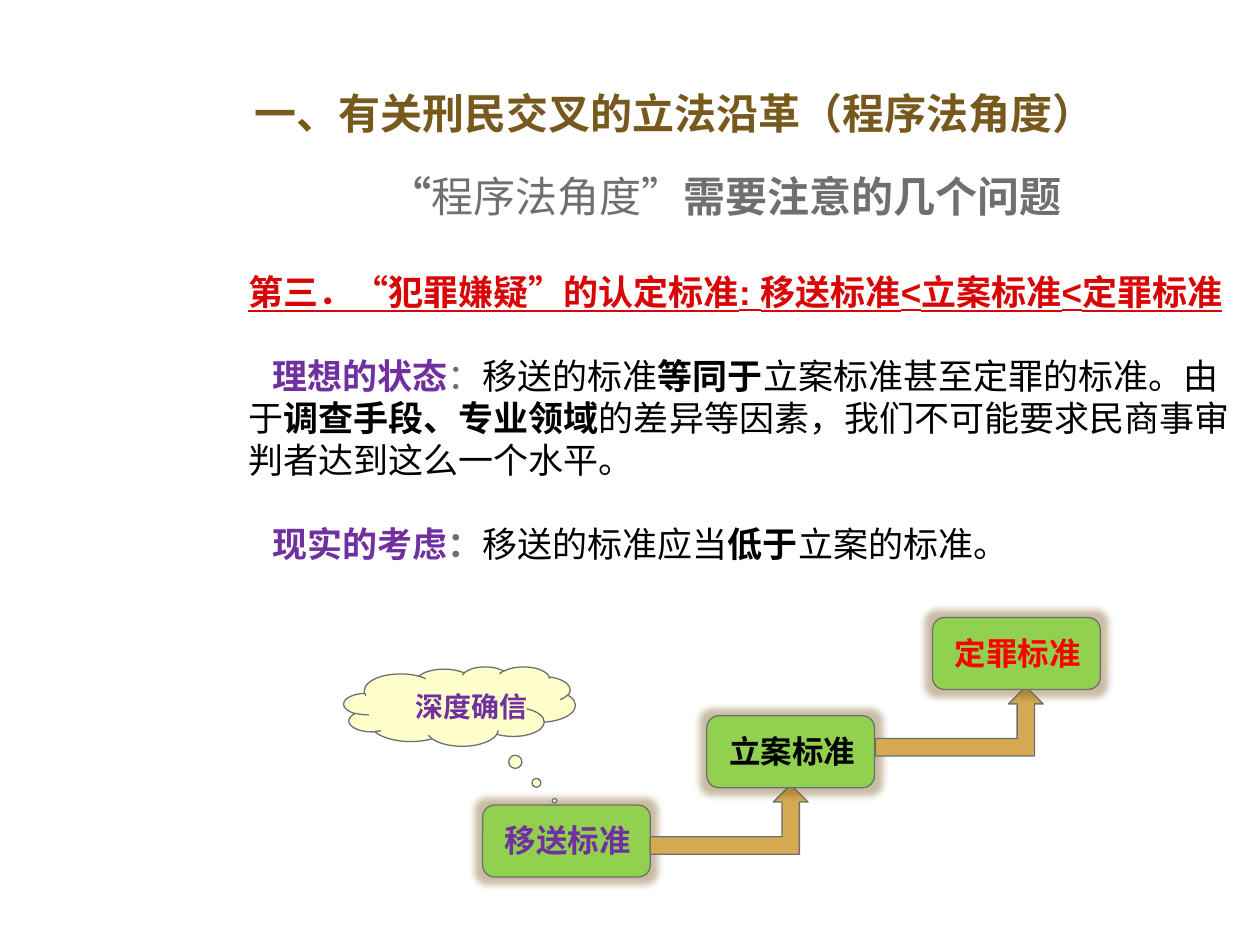
"""Build the slide on transfer, filing and conviction standards."""
from typing import NamedTuple

from lxml import etree
from pptx import Presentation
from pptx import util as u
from pptx.dml.color import RGBColor
from pptx.enum import lang, shapes, text
from pptx.oxml import ns

BROWN = RGBColor(0x78, 0x59, 0x1D)
GRAY = RGBColor(0x6D, 0x6F, 0x71)
CRIMSON = RGBColor(0xD8, 0x06, 0x06)
RED = RGBColor(0xFF, 0x00, 0x00)
PURPLE = RGBColor(0x70, 0x30, 0xA0)
BLACK = RGBColor(0x00, 0x00, 0x00)
GREEN = RGBColor(0x92, 0xD0, 0x50)
CREAM = RGBColor(0xFF, 0xFF, 0xCC)
GOLD = RGBColor(0xD6, 0xA9, 0x53)
SHAPE = shapes.MSO_SHAPE


class Span(NamedTuple):
    text: str
    color: RGBColor
    bold: bool = True
    underline: bool = False


class Area(NamedTuple):
    left: float
    top: float
    width: float
    height: float


class Step(NamedTuple):
    label: str
    color: RGBColor
    left: float
    top: float


TITLE = [Span("一、有关刑民交叉的立法沿革（程序法角度）", BROWN)]
SUBTITLE = [
    Span("“", GRAY),
    Span("程序法角度”", GRAY, False),
    Span("需要注意的几个问题", GRAY),
]
BODY = [
    [Span("第三．“犯罪嫌疑”的认定标准: 移送标准<立案标准<定罪标准", CRIMSON, True, True)],
    [
        Span("理想的状态", PURPLE),
        Span("：", GRAY, False),
        Span("移送的标准", BLACK, False),
        Span("等同于", BLACK),
        Span("立案标准甚至定罪的标准。由于", BLACK, False),
        Span("调查手段、专业领域", BLACK),
        Span("的差异等因素，我们不可能要求民商事审判者达到这么一个水平。", BLACK, False),
    ],
    [
        Span("现实的考虑", PURPLE),
        Span("：", GRAY),
        Span("移送的标准应当", BLACK, False),
        Span("低于", BLACK),
        Span("立案的标准。", BLACK, False),
    ],
]
STEPS = [
    Step("移送标准", PURPLE, 9.73, 16.23),
    Step("立案标准", BLACK, 14.25, 14.43),
    Step("定罪标准", RED, 18.8, 12.45),
]
ARROWS = [Area(13.11, 15.82, 3.18, 1.4), Area(17.65, 13.84, 3.38, 1.4)]


def lengths(area: Area) -> list:
    return [u.Cm(v) for v in area]


def place(s, area: Area) -> None:
    s.left, s.top, s.width, s.height = lengths(area)


def frame(s, anchor):
    tf = s.text_frame
    tf.word_wrap = True
    tf.auto_size = text.MSO_AUTO_SIZE.NONE
    tf.vertical_anchor = anchor
    return tf


def write(p, spans: list[Span], size: float) -> None:
    for span in spans:
        r = p.add_run()
        r.text = span.text
        r.font.name = "Arial"
        r.font.size = u.Pt(size)
        r.font.bold = span.bold
        r.font.underline = span.underline
        r.font.color.rgb = span.color
        r.font.language_id = lang.MSO_LANGUAGE_ID.SIMPLIFIED_CHINESE


def add_text(slide, area: Area, spans: list[Span], size: float, anchor=text.MSO_ANCHOR.TOP):
    p = frame(slide.shapes.add_textbox(*lengths(area)), anchor).paragraphs[0]
    write(p, spans, size)
    return p


def add_shape(slide, kind, area: Area, fill: RGBColor):
    s = slide.shapes.add_shape(kind, *lengths(area))
    s.shadow.inherit = False
    s.fill.solid()
    s.fill.fore_color.rgb = fill
    s.line.color.rgb = GRAY
    s.line.width = u.Pt(0.75)
    return s


def add_glow(s) -> None:
    effects = s._element.spPr.find(ns.qn("a:effectLst"))
    glow = etree.SubElement(effects, ns.qn("a:glow"), rad=str(u.Pt(8)))
    color = etree.SubElement(glow, ns.qn("a:srgbClr"), val=str(BROWN))
    etree.SubElement(color, ns.qn("a:alpha"), val="40000")


def add_step(slide, step: Step) -> None:
    add_glow(add_shape(slide, SHAPE.ROUNDED_RECTANGLE, Area(step.left, step.top, 3.38, 1.45), GREEN))
    label = Area(step.left + 0.2, step.top + 0.2, 3.23, 1.02)
    add_text(slide, label, [Span(step.label, step.color)], 18)


def fill_body(s) -> None:
    tf = frame(s, text.MSO_ANCHOR.TOP)
    for i, spans in enumerate(BODY):
        p = tf.add_paragraph() if i else tf.paragraphs[0]
        pPr = p._p.get_or_add_pPr()
        pPr.set("marL", "0")
        pPr.set("indent", str(u.Cm(0.48 if i else 0)))
        etree.SubElement(pPr, ns.qn("a:buNone"))
        p.line_spacing = u.Pt(24)
        p.space_before = u.Pt(24 if i else 0)
        write(p, spans, 20)


def main() -> None:
    prs = Presentation()
    prs.slide_width, prs.slide_height = u.Cm(25.4), u.Cm(19.05)
    slide = prs.slides.add_slide(prs.slide_layouts[1])

    title, body = slide.placeholders
    place(title, Area(4.88, 1.24, 19.76, 1.68))
    p = frame(title, text.MSO_ANCHOR.BOTTOM).paragraphs[0]
    p.alignment = text.PP_ALIGN.LEFT
    p.line_spacing = 0.9
    write(p, TITLE, 24)

    p = add_text(slide, Area(4.75, 2.9, 19.76, 1.68), SUBTITLE, 24, text.MSO_ANCHOR.BOTTOM)
    p.alignment = text.PP_ALIGN.CENTER

    place(body, Area(4.75, 5.33, 20.65, 10.52))
    fill_body(body)

    add_step(slide, STEPS[0])
    cloud = add_shape(slide, SHAPE.CLOUD_CALLOUT, Area(6.93, 13.44, 4.67, 1.6), CREAM)
    cloud.adjustments[0], cloud.adjustments[1] = 0.41, 1.19
    add_text(slide, Area(8.13, 13.77, 3.78, 0.84), [Span("深度确信", PURPLE)], 16)
    for arrow, step in zip(ARROWS, STEPS[1:]):
        add_shape(slide, SHAPE.BENT_UP_ARROW, arrow, GOLD)
        add_step(slide, step)

    prs.save("out.pptx")


if __name__ == "__main__":
    main()
